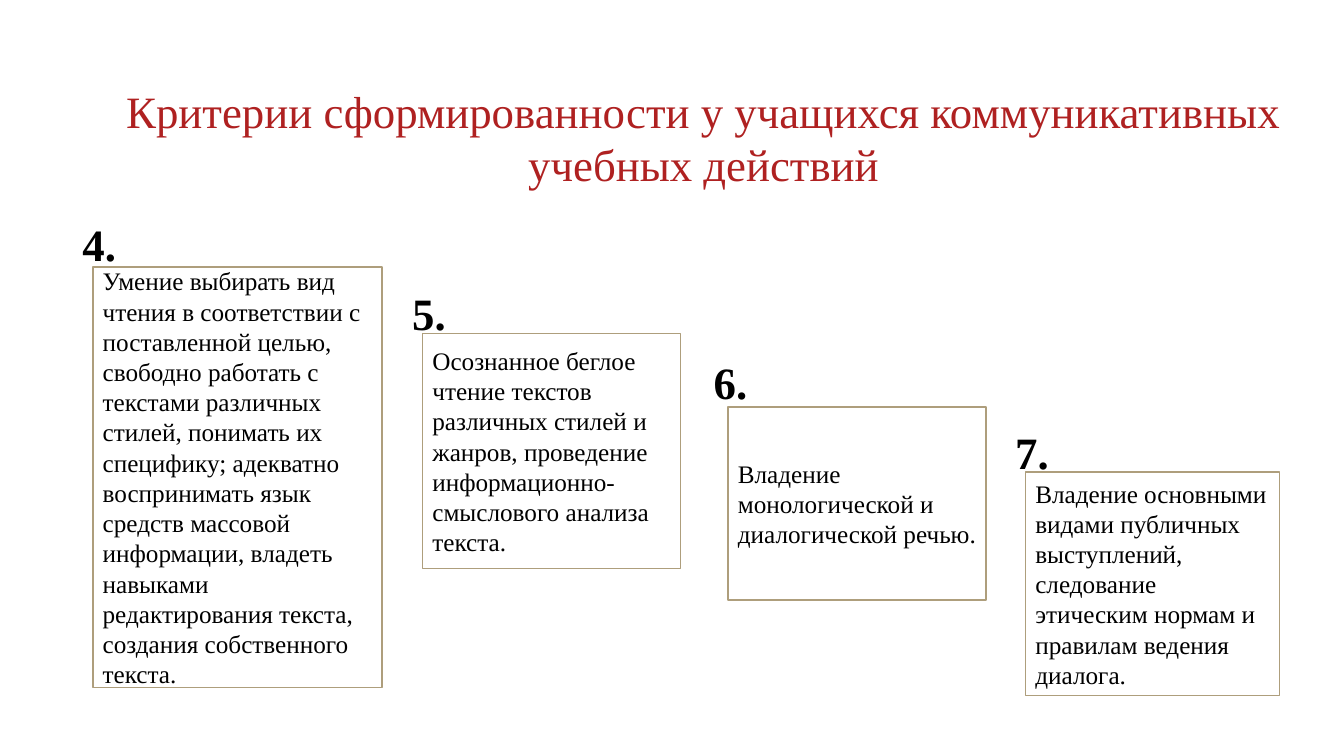
from pptx import Presentation
from pptx.dml.color import RGBColor
from pptx.enum.shapes import MSO_SHAPE
from pptx.enum.text import MSO_ANCHOR, PP_ALIGN
from pptx.util import Inches, Pt

TITLE = "Критерии сформированности у учащихся коммуникативных учебных действий"
FIRST_NUMBER = 4
NUMBER_TOP, NUMBER_STEP = 2.1, 0.685

CRITERIA = [
    ((0.72, 2.76, 2.24), (0.92, 2.65, 2.87, 4.17),
     "Умение выбирать вид чтения в соответствии с поставленной целью, "
     "свободно работать с текстами различных стилей, понимать их специфику; "
     "адекватно воспринимать язык средств массовой информации, владеть "
     "навыками редактирования текста, создания собственного текста."),
    ((3.99, 2.56, 2.24), (4.19, 3.31, 2.56, 2.33),
     "Осознанное беглое чтение текстов различных стилей и жанров, "
     "проведение информационно-смыслового анализа текста."),
    ((6.98, 2.56, 2.24), (7.22, 4.04, 2.56, 1.91),
     "Владение монологической и диалогической речью."),
    ((9.97, 2.48, 2.2), (10.17, 4.68, 2.52, 2.22),
     "Владение основными видами публичных выступлений, следование "
     "этическим нормам и правилам ведения диалога."),
]


def rgb(value):
    return RGBColor.from_string(value)


class SlideBuilder:
    font = "Times New Roman"
    ink = "000000"
    accent = "AF2121"
    border = "AE9E7C"
    paper = "FFFFFF"

    def __init__(self, slide):
        self.slide = slide

    def set_text(self, sp, text, color, anchor, align=PP_ALIGN.LEFT, **font):
        tf = sp.text_frame
        tf.word_wrap = True
        tf.vertical_anchor = anchor
        p = tf.paragraphs[0]
        p.alignment = align
        r = p.add_run()
        r.text = text
        for name, value in {"name": self.font, **font}.items():
            setattr(r.font, name, value)
        r.font.color.rgb = rgb(color)

    def title(self, text, box):
        sp = self.slide.shapes.add_textbox(*map(Inches, box))
        self.set_text(sp, text, self.accent, MSO_ANCHOR.MIDDLE, PP_ALIGN.CENTER, size=Pt(32))

    def panel(self, box):
        sp = self.slide.shapes.add_shape(MSO_SHAPE.RECTANGLE, *map(Inches, box))
        sp.shadow.inherit = False
        sp.fill.solid()
        sp.fill.fore_color.rgb = rgb(self.paper)
        sp.line.fill.background()
        return sp

    def number(self, text, box):
        self.set_text(self.panel(box), text, self.ink, MSO_ANCHOR.TOP, size=Pt(32), bold=True)

    def card(self, text, box):
        sp = self.panel(box)
        sp.line.color.rgb = rgb(self.border)
        sp.line.width = Pt(1.25)
        self.set_text(sp, text, self.ink, MSO_ANCHOR.MIDDLE, size=Pt(18))


def main():
    prs = Presentation()
    prs.slide_width, prs.slide_height = Inches(13.33), Inches(7.5)
    s = SlideBuilder(prs.slides.add_slide(prs.slide_layouts[6]))
    s.title(TITLE, (1.15, 0.76, 11.66, 1.2))
    for i, ((left, width, height), card_box, text) in enumerate(CRITERIA):
        top = round(NUMBER_TOP + i * NUMBER_STEP, 2)
        s.number(f"{FIRST_NUMBER + i}.", (left, top, width, height))
        s.card(text, card_box)
    prs.save("out.pptx")


if __name__ == "__main__":
    main()
